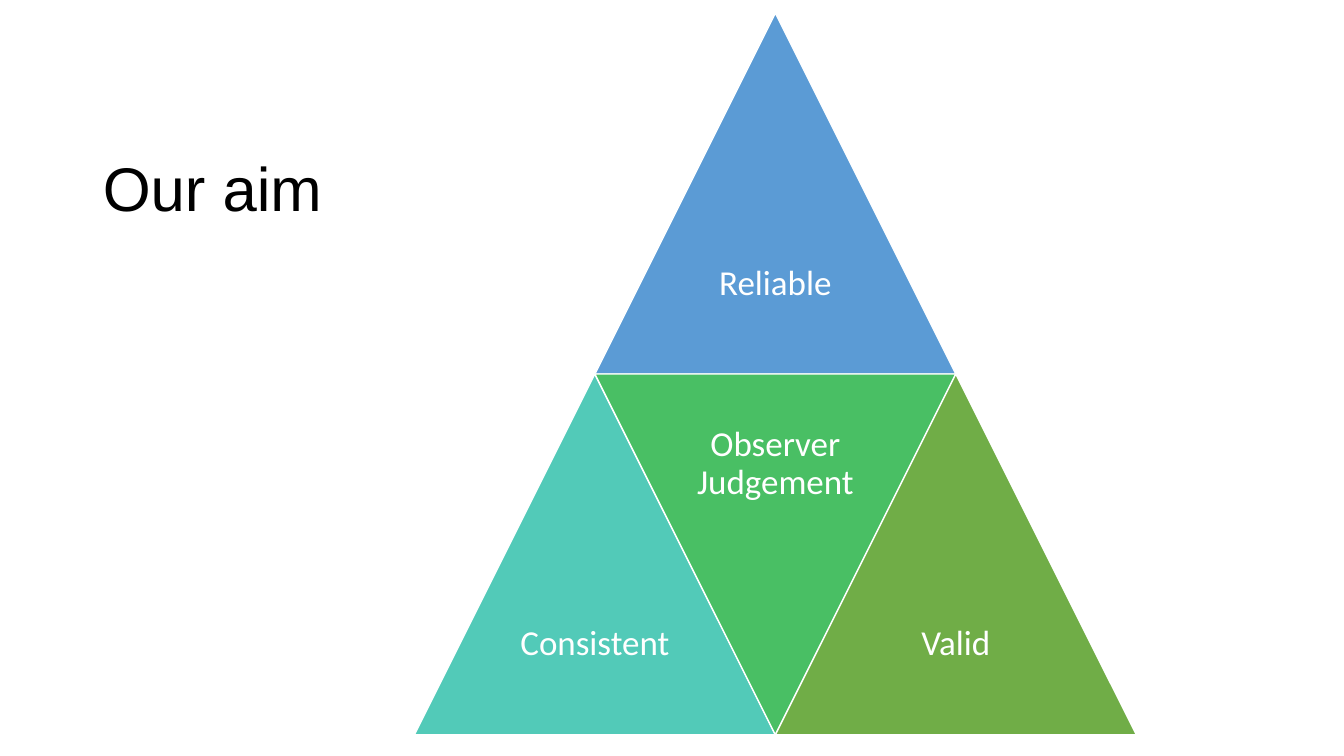
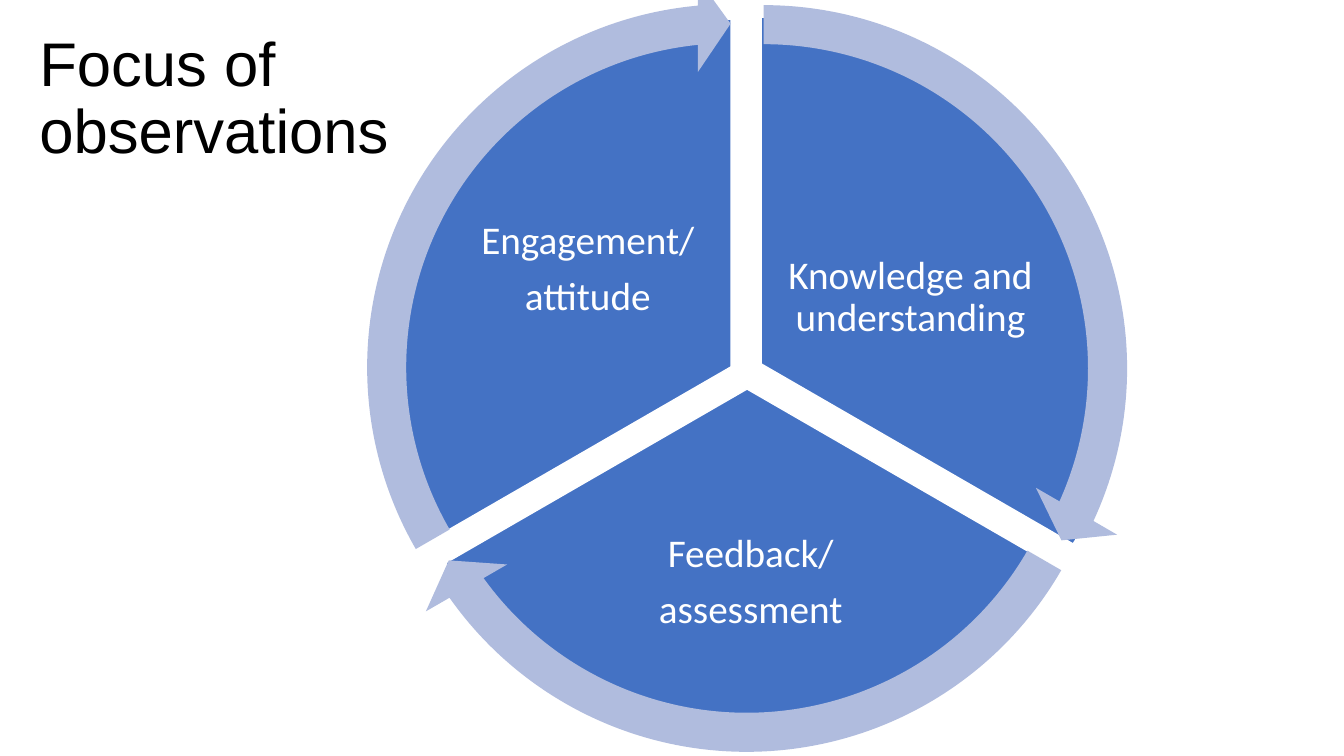
import pptx
import pptx.dml.color
import pptx.enum.shapes
import pptx.enum.text
import pptx.util

Inches, Pt = pptx.util.Inches, pptx.util.Pt
Shape = pptx.enum.shapes.MSO_SHAPE
Align = pptx.enum.text.PP_ALIGN
Anchor = pptx.enum.text.MSO_ANCHOR
Rgb = pptx.dml.color.RGBColor.from_string


class Theme:
    black = Rgb("000000")
    white = Rgb("FFFFFF")
    sky = Rgb("5B9BD5")
    teal = Rgb("52CAB8")
    green = Rgb("49BF64")
    olive = Rgb("70AD47")
    blue = Rgb("4472C4")
    pale = Rgb("B0BCDE")
    head = "Arial"
    body = "Calibri"
    title = 44
    aim = 25
    focus = 28


def draw(slide, kind, box, fill, edge=True):
    shape = slide.shapes.add_shape(kind, *map(Inches, box))
    shape.shadow.inherit = False
    shape.fill.solid()
    shape.fill.fore_color.rgb = fill
    if edge:
        shape.line.color.rgb = Theme.white
        shape.line.width = Pt(1)
    else:
        shape.line.fill.background()
    return shape


def write(shape, text, size, pad, font=Theme.body, color=Theme.white, align=Align.CENTER):
    frame = shape.text_frame
    frame.text = text
    frame.word_wrap = True
    frame.auto_size = pptx.enum.text.MSO_AUTO_SIZE.NONE
    frame.vertical_anchor = Anchor.MIDDLE
    frame.margin_left = frame.margin_right = Inches(pad)
    frame.margin_top = frame.margin_bottom = Inches(min(pad, 0.1))
    for par in frame.paragraphs:
        par.alignment = align
        par.line_spacing = 0.9
        par.space_after = Pt(0.35 * size)
        par.font.name = font
        par.font.size = Pt(size)
        par.font.color.rgb = color


deck = pptx.Presentation()
deck.slide_width, deck.slide_height = Inches(13.33), Inches(7.5)

slides = []
for text, box in [
    ("Our aim", (0.92, 1.18, 4.73, 1.45)),
    ("Focus of observations", (0.29, 0.27, 3.7, 1.45)),
]:
    slide = deck.slides.add_slide(deck.slide_layouts[5])
    title = slide.shapes.title
    title.left, title.top, title.width, title.height = map(Inches, box)
    write(title, text, Theme.title, 0.1, Theme.head, Theme.black, Align.LEFT)
    slides.append(slide)
aim, focus = slides

side, left, top = 3.58, 4.11, 0.13
for text, col, row, fill, turned in [
    ("Reliable", 0.5, 0, Theme.sky, False),
    ("Consistent", 0, 1, Theme.teal, False),
    ("Observer Judgement", 0.5, 1, Theme.green, True),
    ("Valid", 1, 1, Theme.olive, False),
]:
    x, y = left + col * side, top + row * side
    label = draw(aim, Shape.ISOSCELES_TRIANGLE, (x, y, side, side), fill)
    if turned:
        label.rotation = 180
        box = (x + side / 4, y, side / 2, side / 2)
        label = aim.shapes.add_textbox(*map(Inches, box))
    write(label, text, Theme.aim, 0.1)

full, third, sweep = 216, 72, 68.73
parts = [
    ("Knowledge and understanding", 162, (3.93, 0.17, 7.24, 6.88), (7.74, 1.93, 2.58, 2.05), (3.7, -0.22)),
    ("Feedback/\nassessment", 18, (3.96, 0.41, 6.9, 6.9), (5.6, 4.88, 3.69, 1.81), (3.53, -0.02)),
    ("Engagement/\nattitude", 90, (3.8, 0.19, 6.9, 6.9), (4.6, 1.65, 2.46, 2.05), (3.37, -0.23)),
]
for text, start, pie, box, spot in parts:
    wedge = draw(focus, Shape.PIE, pie, Theme.blue)
    wedge.adjustments[0] = start
    wedge.adjustments[1] = (start + third) % full
    label = focus.shapes.add_textbox(*map(Inches, box))
    write(label, text, Theme.focus, 0.04)

ring = 7.75
for text, start, pie, box, spot in parts:
    arrow = draw(focus, Shape.CIRCULAR_ARROW, (*spot, ring, ring), Theme.pale, edge=False)
    for i, value in enumerate([0.05, 3.28, (start + sweep) % full, start, 0.06]):
        arrow.adjustments[i] = value

deck.save("out.pptx")
